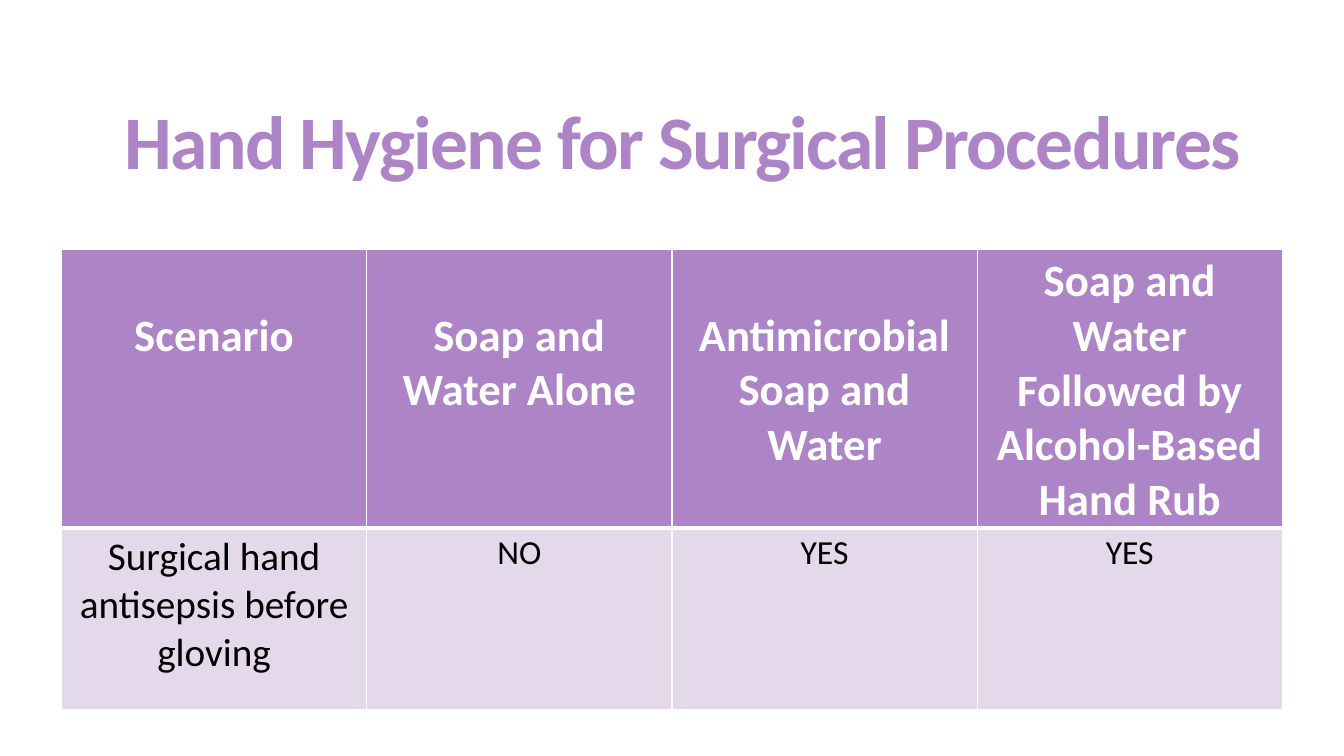
from lxml.etree import SubElement
from pptx import Presentation
from pptx.dml.color import RGBColor
from pptx.enum.text import MSO_ANCHOR, PP_ALIGN
from pptx.oxml.ns import qn
from pptx.util import Inches, Pt

PURPLE = RGBColor(0xAD, 0x84, 0xC6)
LILAC = RGBColor(0xE3, 0xD9, 0xEA)
WHITE = RGBColor(0xFF, 0xFF, 0xFF)
BLACK = RGBColor(0x00, 0x00, 0x00)
FONT = "Calibri"


def style_paragraph(paragraph, size, color, bold):
    paragraph.alignment = PP_ALIGN.CENTER
    paragraph.font.name = FONT
    paragraph.font.size = Pt(size)
    paragraph.font.bold = bold
    paragraph.font.color.rgb = color


def add_borders(cell, widths):
    cell_props = cell._tc.get_or_add_tcPr()
    for side, width in widths.items():
        line = SubElement(cell_props, qn(f"a:ln{side}"), w=str(Pt(width)))
        fill = SubElement(line, qn("a:solidFill"))
        SubElement(fill, qn("a:srgbClr"), val=str(WHITE))


prs = Presentation()
prs.slide_width = Inches(13.33)
prs.slide_height = Inches(7.5)
slide = prs.slides.add_slide(prs.slide_layouts[6])

# Title
title = slide.shapes.add_textbox(Inches(0.72), Inches(0.55), Inches(12.11), Inches(1.81))
title_frame = title.text_frame
title_frame.word_wrap = True
title_frame.vertical_anchor = MSO_ANCHOR.MIDDLE
heading = title_frame.paragraphs[0]
heading.line_spacing = 0.85
heading_run = heading.add_run()
heading_run.text = "Hand Hygiene for Surgical Procedures"
heading_run._r.get_or_add_rPr().set("spc", "-120")
style_paragraph(heading, 54, PURPLE, True)

# Hand hygiene table: text and size of each cell
headers = [
    ("Scenario", 32),
    ("Soap and Water Alone", 32),
    ("Antimicrobial Soap and Water", 32),
    ("Soap and Water Followed by Alcohol-Based Hand Rub", 32),
]
surgical_hand = [
    ("Surgical hand antisepsis before gloving", 28),
    ("NO", 24),
    ("YES", 24),
    ("YES", 24),
]
# Fill, text colour, bold and border widths of each row
row_styles = [
    (PURPLE, WHITE, True, {"L": 1, "R": 1, "T": 1, "B": 3}),
    (LILAC, BLACK, False, {"L": 1, "R": 1, "T": 3, "B": 1}),
]

hygiene = slide.shapes.add_table(
    2, 4, Inches(0.61), Inches(2.47), Inches(12.11), Inches(4.18)).table
hygiene.rows[0].height = Inches(2.38)
hygiene.rows[1].height = Inches(1.8)

for r, (entries, row_style) in enumerate(zip((headers, surgical_hand), row_styles)):
    fill_color, text_color, bold, borders = row_style
    for c, (text, size) in enumerate(entries):
        cell = hygiene.cell(r, c)
        add_borders(cell, borders)
        cell.fill.solid()
        cell.fill.fore_color.rgb = fill_color
        cell.text = text
        style_paragraph(cell.text_frame.paragraphs[0], size, text_color, bold)

# The three shorter headers start one line lower
for c in range(3):
    hygiene.cell(0, c).margin_top = Inches(0.59)

prs.save("out.pptx")
